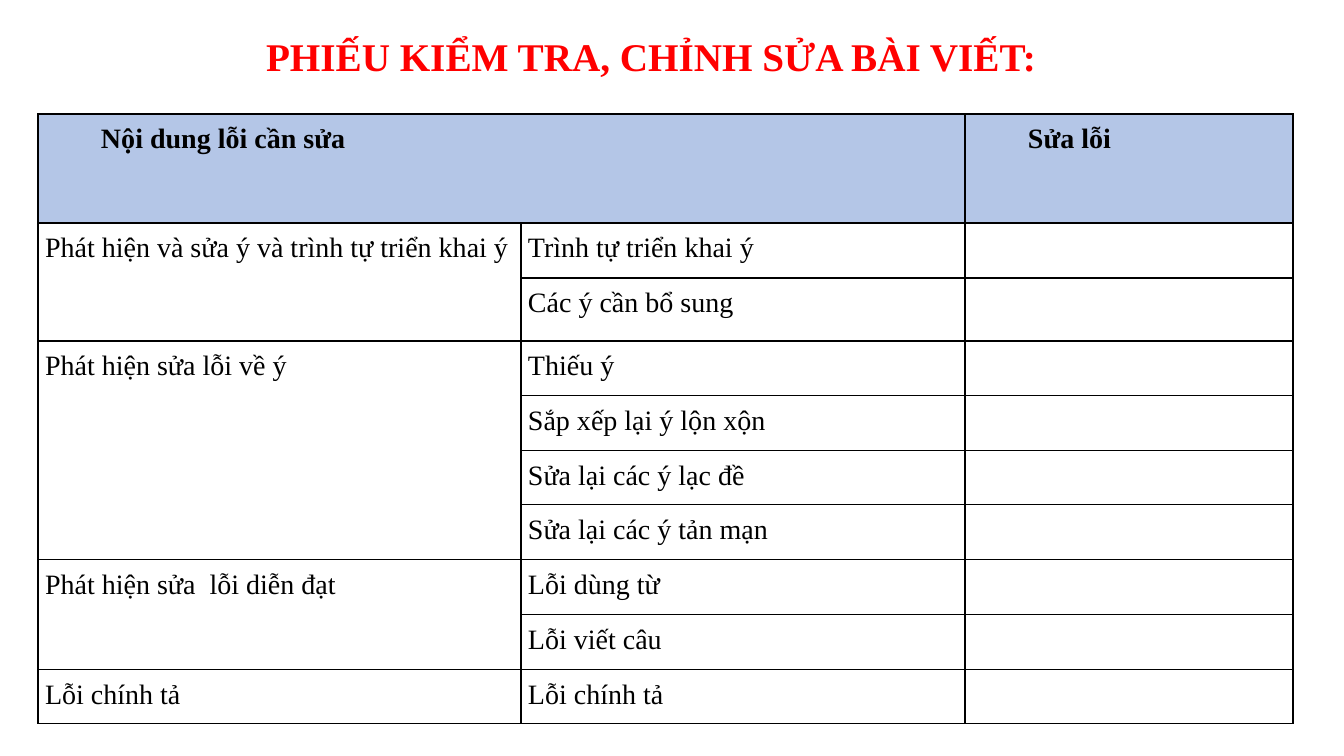
from lxml import etree
from pptx import Presentation
from pptx.dml.color import RGBColor
from pptx.enum import text
from pptx.oxml import ns
from pptx.util import Pt

SCALE = 914400 / 100.8
RED = RGBColor(0xFF, 0, 0)
BLACK = RGBColor(0, 0, 0)
BLUE = RGBColor(0xB4, 0xC6, 0xE7)

HEADS = {0: "Nội dung lỗi cần sửa", 2: "Sửa lỗi"}
GROUPS = [
    ("Phát hiện và sửa ý và trình tự triển khai ý",
     ["Trình tự triển khai ý", "Các ý cần bổ sung"]),
    ("Phát hiện sửa lỗi về ý",
     ["Thiếu ý", "Sắp xếp lại ý lộn xộn", "Sửa lại các ý lạc đề",
      "Sửa lại các ý tản mạn"]),
    ("Phát hiện sửa  lỗi diễn đạt", ["Lỗi dùng từ", "Lỗi viết câu"]),
    ("Lỗi chính tả", ["Lỗi chính tả"]),
]
COLS = [483, 444, 328]
ROWS = [109, 55, 63] + [55, 55, 54, 55, 55, 55, 54]


def px(n):
    return round(n * SCALE)


def write(frame, words, size=20, color=BLACK, bold=False,
          align=text.PP_ALIGN.LEFT):
    para = frame.paragraphs[0]
    para.alignment = align
    para.line_spacing = 1.3
    run = para.add_run()
    run.text = words
    font = run.font
    font.name, font.size, font.bold = "Times New Roman", Pt(size), bold
    font.color.rgb = color


class Sheet:
    def __init__(self):
        self.deck = Presentation()
        self.deck.slide_width, self.deck.slide_height = px(1344), px(756)
        self.slide = self.deck.slides.add_slide(self.deck.slide_layouts[5])

    def title(self, words, left, top, width, height):
        box = self.slide.shapes.title
        box.left, box.top = px(left), px(top)
        box.width, box.height = px(width), px(height)
        frame = box.text_frame
        frame.auto_size = text.MSO_AUTO_SIZE.NONE
        frame.vertical_anchor = text.MSO_ANCHOR.TOP
        frame.word_wrap = False
        write(frame, words, size=28, color=RED, bold=True)

    def table(self, left, top, cols, rows):
        frame = self.slide.shapes.add_table(
            len(rows), len(cols), px(left), px(top),
            px(sum(cols)), px(sum(rows)))
        grid = frame.table
        grid.first_row = grid.horz_banding = False
        for col, width in zip(grid.columns, cols):
            col.width = px(width)
        for row, height in zip(grid.rows, rows):
            row.height = px(height)
        for cell in grid.iter_cells():
            self.edge(cell)
            cell.fill.background()
            cell.margin_left = cell.margin_right = px(7)
            cell.margin_top = cell.margin_bottom = 0
        return grid

    def edge(self, cell):
        """Draw a thin black border on all four sides of a cell."""
        props = cell._tc.get_or_add_tcPr()
        for side in ("a:lnL", "a:lnR", "a:lnT", "a:lnB"):
            line = etree.SubElement(props, ns.qn(side), w=str(Pt(1)))
            fill = etree.SubElement(line, ns.qn("a:solidFill"))
            etree.SubElement(fill, ns.qn("a:srgbClr"), val=str(BLACK))

    def head(self, grid, heads):
        grid.cell(0, 0).merge(grid.cell(0, 1))
        for col in range(len(grid.columns)):
            cell = grid.cell(0, col)
            cell.fill.solid()
            cell.fill.fore_color.rgb = BLUE
            if col in heads:
                cell.margin_left = px(63)
                write(cell.text_frame, heads[col], bold=True)

    def body(self, grid, groups):
        row = 1
        for name, items in groups:
            first = grid.cell(row, 0)
            if len(items) > 1:
                first.merge(grid.cell(row + len(items) - 1, 0))
            write(first.text_frame, name, align=text.PP_ALIGN.JUSTIFY)
            for item in items:
                write(grid.cell(row, 1).text_frame, item)
                row += 1


def main():
    sheet = Sheet()
    grid = sheet.table(38, 114, COLS, ROWS)
    sheet.head(grid, HEADS)
    sheet.body(grid, GROUPS)
    sheet.title("PHIẾU KIỂM TRA, CHỈNH SỬA BÀI VIẾT:", 256, 13, 798, 66)
    sheet.deck.save("out.pptx")


if __name__ == "__main__":
    main()
